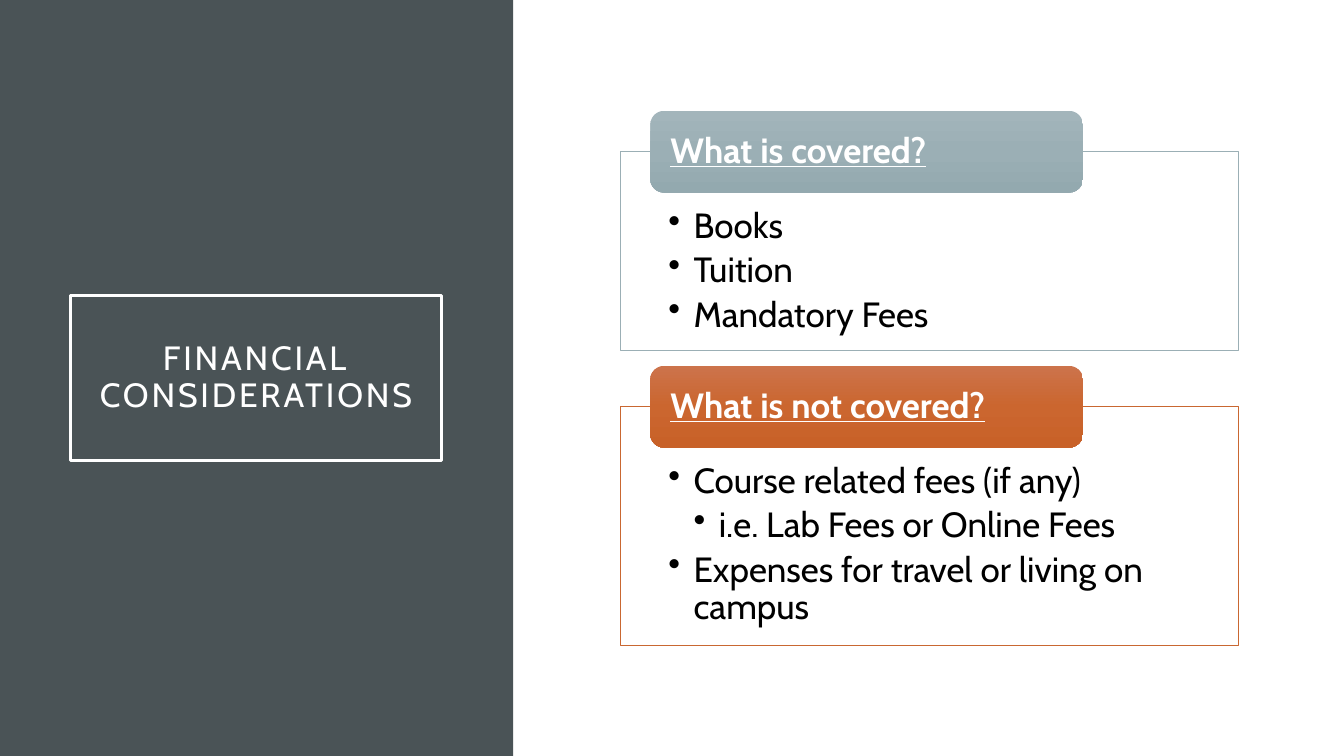
import copy

import pptx
import pptx.dml.color
import pptx.enum.shapes
import pptx.enum.text
import pptx.oxml.ns
import pptx.util
from pptx.util import Inches

COLORS = {
    "panel": "4A5356",
    "white": "FFFFFF",
    "black": "000000",
    "covered": "9BAFB5",
    "not_covered": "C96731",
}
GRADIENTS = {
    "covered": ("A3B5BB", "9BAFB5", "93A9AF"),
    "not_covered": ("CC734B", "CB662F", "C86128"),
}
SECTIONS = [
    ("covered", "What is covered?", 1.5, 1.98,
     [(0, "Books"), (0, "Tuition"), (0, "Mandatory Fees")]),
    ("not_covered", "What is not covered?", 4.03, 2.37,
     [(0, "Course related fees (if any)"),
      (1, "i.e. Lab Fees or Online Fees"),
      (0, "Expenses for travel or living on campus")]),
]
SHAPE = pptx.enum.shapes.MSO_SHAPE
ALIGN = pptx.enum.text.PP_ALIGN
ANCHOR = pptx.enum.text.MSO_ANCHOR
qn = pptx.oxml.ns.qn


def rgb(value):
    return pptx.dml.color.RGBColor.from_string(value)


class SlideBuilder:
    font = "Cabin"

    def __init__(self, slide):
        self.slide = slide

    def box(self, kind, left, top, width, height, fill=None, line=None, weight=0.5):
        shape = self.slide.shapes.add_shape(
            kind, Inches(left), Inches(top), Inches(width), Inches(height))
        shape.shadow.inherit = False
        if fill:
            shape.fill.solid()
            shape.fill.fore_color.rgb = rgb(COLORS[fill])
        else:
            shape.fill.background()
        if line:
            shape.line.color.rgb = rgb(COLORS[line])
            shape.line.width = pptx.util.Pt(weight)
        else:
            shape.line.fill.background()
        return shape

    def shade(self, shape, gradient):
        shape.fill.gradient()
        shape.fill.gradient_angle = 270
        stop_list = shape._element.spPr.find(qn("a:gradFill")).find(qn("a:gsLst"))
        stop_list.insert(1, copy.deepcopy(stop_list[0]))
        for stop, position, color in zip(
                shape.fill.gradient_stops, (0, 0.5, 1), GRADIENTS[gradient]):
            stop.position = position
            stop.color.rgb = rgb(color)

    def text(self, shape, lines, size, color, insets, anchor=ANCHOR.MIDDLE,
             align=ALIGN.LEFT, bold=False, underline=False):
        frame = shape.text_frame
        frame.word_wrap = True
        frame.vertical_anchor = anchor
        (frame.margin_left, frame.margin_top,
         frame.margin_right, frame.margin_bottom) = map(Inches, insets)
        frame.text = "\n".join(lines)
        for paragraph in frame.paragraphs:
            paragraph.alignment = align
            paragraph.line_spacing = 0.9
            for run in paragraph.runs:
                run.font.name = self.font
                run.font.size = pptx.util.Pt(size)
                run.font.color.rgb = rgb(COLORS[color])
                run.font.bold = bold
                run.font.underline = underline
        return frame.paragraphs

    def title(self, wording):
        frame = self.box(SHAPE.RECTANGLE, 0.7, 2.93, 3.68, 1.64, line="white", weight=2.5)
        paragraphs = self.text(frame, [wording], 24, "white", [0.2] * 4, align=ALIGN.CENTER)
        paragraphs[0].runs[0].font._element.set("spc", "200")

    def bullets(self, shape, items):
        paragraphs = self.text(shape, [wording for _, wording in items], 25, "black",
                               (0.48, 0.57, 0.48, 0.19), ANCHOR.TOP)
        for paragraph, (level, _) in zip(paragraphs, items):
            paragraph.level = level
            paragraph.space_after = pptx.util.Pt(4.5)
            properties = paragraph._p.get_or_add_pPr()
            properties.set("marL", str(Inches(0.25 * (level + 1))))
            properties.set("indent", str(-Inches(0.25)))
            bullet = properties.makeelement(qn("a:buChar"), {"char": "•"})
            properties.append(bullet)

    def section(self, color, heading, top, height, items):
        body = self.box(SHAPE.RECTANGLE, 6.15, top, 6.13, height, "white", color)
        self.bullets(body, items)
        tab = self.box(SHAPE.ROUNDED_RECTANGLE, 6.45, top - 0.4, 4.29, 0.81)
        self.shade(tab, color)
        self.text(tab, [heading], 25, "white", (0.16, 0, 0.16, 0),
                  bold=True, underline=True)


def main():
    deck = pptx.Presentation()
    deck.slide_width = Inches(13.33)
    deck.slide_height = Inches(7.5)
    builder = SlideBuilder(deck.slides.add_slide(deck.slide_layouts[6]))
    builder.box(SHAPE.RECTANGLE, 0, 0, 5.09, 7.5, "panel")
    builder.title("FINANCIAL CONSIDERATIONS")
    for section in SECTIONS:
        builder.section(*section)
    deck.save("out.pptx")


if __name__ == "__main__":
    main()
